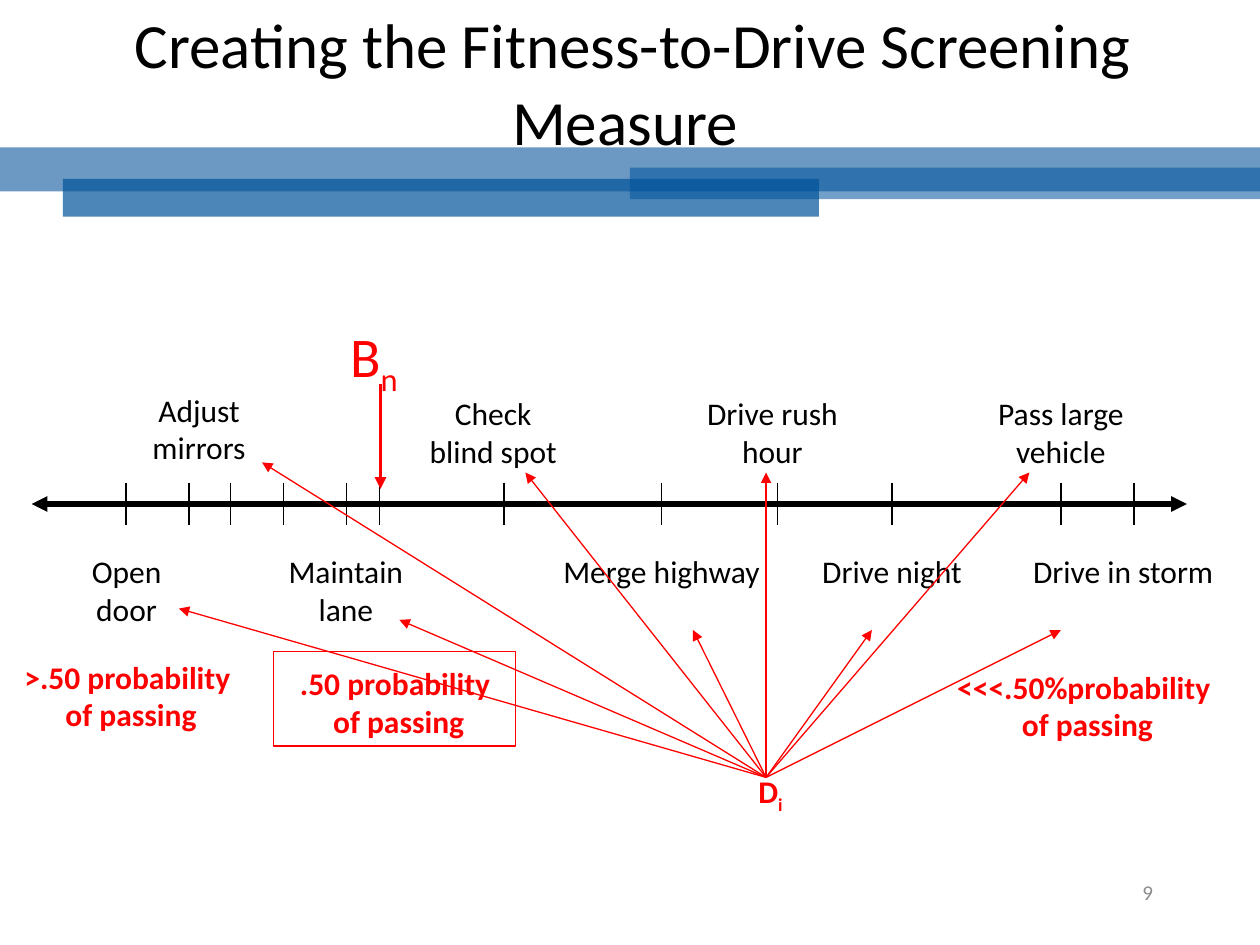
"""Build the slide on creating the Fitness-to-Drive Screening Measure."""
from dataclasses import dataclass

from lxml.etree import SubElement
from pptx import Presentation
from pptx.dml.color import RGBColor
from pptx.enum.shapes import MSO_CONNECTOR as Connector, MSO_SHAPE as Shape
from pptx.enum.text import MSO_ANCHOR as Anchor, PP_ALIGN as Align
from pptx.oxml.ns import qn
from pptx.util import Inches, Pt

COLORS = {"black": "000000", "red": "FF0000", "gray": "8C8C8C", "band": "6C99C3", "blue": "00539B"}
FONT = "Calibri"
AXIS_Y = 4
TICK_HALF = 0.17
LABEL_TOP, LABEL_BOTTOM = 3.08, 4.33
DIFFICULTY_ORIGIN = (6.08, 6.17)


@dataclass
class Band:
    left: float
    top: float
    width: float
    height: float
    color: str
    opacity: int = 100


@dataclass
class Run:
    text: str
    size: float = 18
    color: str = "black"
    bold: bool = False
    subscript: bool = False


@dataclass
class Label:
    left: float
    top: float
    width: float
    height: float
    lines: list[list[Run]]
    align: Align = Align.CENTER
    anchor: Anchor = Anchor.TOP
    wrap: bool = True


@dataclass
class Line:
    start: tuple[float, float]
    end: tuple[float, float]
    color: str = "black"
    width: float = 0.75
    head: bool = False
    tail: bool = False


def rgb(name: str) -> RGBColor:
    """Return the named colour."""
    return RGBColor.from_string(COLORS[name])


def draw_band(slide, band: Band) -> None:
    """Draw a filled rectangle with optional transparency."""
    shape = slide.shapes.add_shape(
        Shape.RECTANGLE, Inches(band.left), Inches(band.top), Inches(band.width), Inches(band.height))
    shape.shadow.inherit = False
    shape.line.fill.background()
    shape.fill.solid()
    shape.fill.fore_color.rgb = rgb(band.color)
    if band.opacity < 100:
        color = shape._element.spPr.find(qn("a:solidFill"))[0]
        SubElement(color, qn("a:alpha")).set("val", str(band.opacity * 1000))


def draw_label(slide, label: Label) -> None:
    """Draw a text box, one paragraph for each line."""
    box = slide.shapes.add_textbox(
        Inches(label.left), Inches(label.top), Inches(label.width), Inches(label.height))
    frame = box.text_frame
    frame.word_wrap = label.wrap
    frame.vertical_anchor = label.anchor
    for index, line in enumerate(label.lines):
        paragraph = frame.add_paragraph() if index else frame.paragraphs[0]
        paragraph.alignment = label.align
        for part in line:
            run = paragraph.add_run()
            run.text = part.text
            run.font.name = FONT
            run.font.size = Pt(part.size)
            run.font.bold = part.bold
            run.font.color.rgb = rgb(part.color)
            if part.subscript:
                run._r.get_or_add_rPr().set("baseline", "-25000")


def draw_line(slide, line: Line) -> None:
    """Draw a straight line with optional arrowheads."""
    connector = slide.shapes.add_connector(
        Connector.STRAIGHT, *(Inches(value) for value in (*line.start, *line.end)))
    connector.line.color.rgb = rgb(line.color)
    connector.line.width = Pt(line.width)
    outline = connector.line._get_or_add_ln()
    for tag, wanted in (("a:headEnd", line.head), ("a:tailEnd", line.tail)):
        if wanted:
            SubElement(outline, qn(tag)).set("type", "triangle")
    SubElement(connector._element.spPr, qn("a:effectLst"))


def draw_frame(slide) -> None:
    """Draw the red outline around the even-odds note."""
    shape = slide.shapes.add_shape(
        Shape.RECTANGLE, Inches(2.17), Inches(5.17), Inches(1.92), Inches(0.75))
    shape.shadow.inherit = False
    shape.fill.background()
    shape.line.color.rgb = rgb("red")
    shape.line.width = Pt(0.75)


def probability(text: str) -> list[list[Run]]:
    """Return the two bold lines of a probability note."""
    return [[Run(line, color="red", bold=True)] for line in (text, "of passing")]


def task(text: str, left: float, top: float, width: float, height: float = 0.71) -> Label:
    """Return the label of a driving task."""
    return Label(left, top, width, height, [[Run(text)]])


BANDS = [
    Band(0, 1.17, 10, 0.35, "band"),
    Band(0.5, 1.42, 6, 0.3, "blue", 70),
    Band(5, 1.33, 5, 0.25, "blue", 55),
]
LABELS = [
    Label(0, 0, 9.92, 1.25,
          [[Run(" ", 39.6), Run("Creating the Fitness-to-Drive Screening Measure", 36)]],
          anchor=Anchor.MIDDLE),
    Label(7.17, 6.83, 2.08, 0.5, [[Run("9", 12, "gray")]], Align.RIGHT, Anchor.MIDDLE),
    Label(7.42, 5.25, 2.42, 0.7, probability("<<<.50%probability ")),
    Label(-0.17, 5.17, 2.42, 0.7, probability(">.50 probability ")),
    Label(2.25, 5.28, 1.83, 0.58, probability(".50 probability "), anchor=Anchor.MIDDLE, wrap=False),
    task("Adjust mirrors", 0.83, 3.05, 1.5),
    task("Check blind spot", 3.25, LABEL_TOP, 1.33),
    task("Drive rush hour", 5.42, LABEL_TOP, 1.42),
    task("Pass large vehicle", 7.67, LABEL_TOP, 1.5),
    task("Open door", 0.42, LABEL_BOTTOM, 1.17),
    task("Maintain lane", 2.08, LABEL_BOTTOM, 1.33),
    task("Merge highway", 4.25, LABEL_BOTTOM, 2, 0.4),
    task("Drive night", 6.33, LABEL_BOTTOM, 1.5, 0.4),
    task("Drive in storm", 8.08, LABEL_BOTTOM, 1.67, 0.4),
    Label(2.68, 2.5, 0.6, 0.64,
          [[Run("B", 32, "red"), Run("n", 32, "red", subscript=True)]], Align.LEFT, wrap=False),
    Label(5.92, 6.08, 0.58, 0.5,
          [[Run("D", 18, "red", True), Run("i", 18, "red", True, True)]], Align.LEFT),
]
TICKS = [1, 1.5, 1.83, 2.25, 2.75, 3.01, 4, 5.25, 6.17, 7.08, 8.42, 9]
TASK_POINTS = [(1.42, 4.83), (3.17, 4.92), (2.08, 3.67), (4.17, 3.75), (5.5, 5),
               (6.08, 3.75), (6.92, 5), (8.17, 3.75), (8.42, 5)]
LINES = [
    Line((0.25, AXIS_Y), (9.42, AXIS_Y), width=3, head=True, tail=True),
    *(Line((x, AXIS_Y - TICK_HALF), (x, AXIS_Y + TICK_HALF)) for x in TICKS),
    Line((3.02, 3.05), (3.02, 3.88), "red", 2.25, tail=True),
    *(Line(DIFFICULTY_ORIGIN, point, "red", tail=True) for point in TASK_POINTS),
]


def main() -> None:
    """Build and save the presentation."""
    presentation = Presentation()
    presentation.slide_width, presentation.slide_height = Inches(10), Inches(7.5)
    slide = presentation.slides.add_slide(presentation.slide_layouts[6])
    for band in BANDS:
        draw_band(slide, band)
    for label in LABELS:
        draw_label(slide, label)
    draw_frame(slide)
    for line in LINES:
        draw_line(slide, line)
    presentation.save("out.pptx")


if __name__ == "__main__":
    main()
